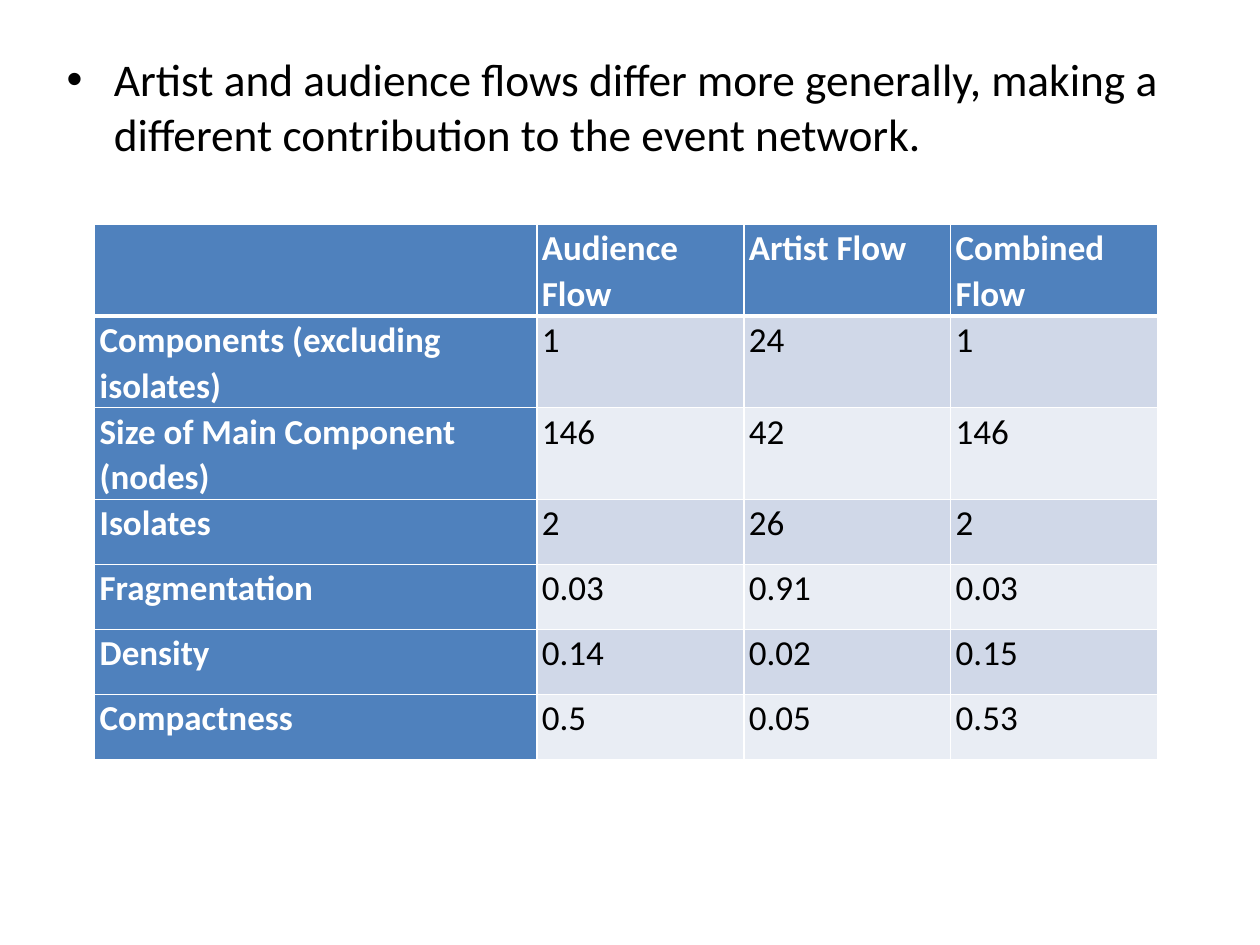
from lxml import etree
from pptx import Presentation
from pptx.dml.color import RGBColor
from pptx.enum.text import MSO_ANCHOR, MSO_AUTO_SIZE
from pptx.oxml.ns import qn
from pptx.util import Cm, Pt

TOP = MSO_ANCHOR.TOP
NO_AUTOFIT = MSO_AUTO_SIZE.NONE

WHITE = RGBColor(0xFF, 0xFF, 0xFF)
BLACK = RGBColor(0x00, 0x00, 0x00)
BLUE = RGBColor(0x4F, 0x81, 0xBD)
DARK_BAND = RGBColor(0xD0, 0xD8, 0xE8)
LIGHT_BAND = RGBColor(0xE9, 0xED, 0xF4)
FONT = "Calibri"

STATEMENT = (
    "Artist and audience flows differ more generally, "
    "making a different contribution to the event network."
)
FLOW_ROWS = [
    ["", "Audience Flow", "Artist Flow", "Combined Flow"],
    ["Components (excluding isolates)", "1", "24", "1"],
    ["Size of Main Component (nodes)", "146", "42", "146"],
    ["Isolates", "2", "26", "2"],
    ["Fragmentation", "0.03", "0.91", "0.03"],
    ["Density", "0.14", "0.02", "0.15"],
    ["Compactness", "0.5", "0.05", "0.53"],
]
LABEL_SHARE = 0.416
ROW_HEIGHT = Cm(1.31)


def format_runs(para, size, color, bold=False):
    for span in para.runs:
        span.font.name = FONT
        span.font.size = Pt(size)
        span.font.bold = bold
        span.font.color.rgb = color


def set_borders(cell, widths):
    properties = cell._tc.get_or_add_tcPr()
    for position, (side, width) in enumerate(widths.items()):
        line = etree.Element(qn(f"a:ln{side}"), w=str(Pt(width)))
        fill = etree.SubElement(line, qn("a:solidFill"))
        etree.SubElement(fill, qn("a:srgbClr"), val=str(WHITE))
        properties.insert(position, line)


def add_statement(page, left, top, width, height):
    body = page.placeholders[1]
    body.left, body.top, body.width, body.height = left, top, width, height
    frame = body.text_frame
    frame.text = STATEMENT
    frame.auto_size = NO_AUTOFIT
    frame.vertical_anchor = TOP
    format_runs(frame.paragraphs[0], 25.9, BLACK)


def format_cell(cell, text, row, column):
    heading = row == 0 or column == 0
    cell.margin_left = cell.margin_right = Cm(0.1)
    cell.margin_top = cell.margin_bottom = 0
    cell.vertical_anchor = TOP
    cell.fill.solid()
    band = DARK_BAND if row % 2 else LIGHT_BAND
    cell.fill.fore_color.rgb = BLUE if heading else band
    set_borders(cell, {
        "L": 1,
        "R": 1,
        "T": 3 if row == 1 else 1,
        "B": 3 if row == 0 else 1,
    })
    para = cell.text_frame.paragraphs[0]
    para.line_spacing = 1.07
    if text:
        para.text = text
        format_runs(para, 20, WHITE if heading else BLACK, heading)


def add_flow_table(page, left, top, width):
    row_count, column_count = len(FLOW_ROWS), len(FLOW_ROWS[0])
    table = page.shapes.add_table(
        row_count, column_count, left, top, width, ROW_HEIGHT * row_count
    ).table
    table.first_col = True
    label_width = int(width * LABEL_SHARE)
    value_width = (width - label_width) // (column_count - 1)
    for index, column in enumerate(table.columns):
        column.width = value_width if index else label_width
    for row, values in enumerate(FLOW_ROWS):
        for column, text in enumerate(values):
            format_cell(table.cell(row, column), text, row, column)


def main():
    deck = Presentation()
    deck.slide_width, deck.slide_height = Cm(25.4), Cm(19.05)
    page = deck.slides.add_slide(deck.slide_layouts[1])
    title = page.shapes.title._element
    title.getparent().remove(title)
    add_flow_table(page, Cm(1.91), Cm(4.52), Cm(21.43))
    add_statement(page, Cm(1.09), Cm(0.91), Cm(24), Cm(2.21))
    deck.save("out.pptx")


if __name__ == "__main__":
    main()
